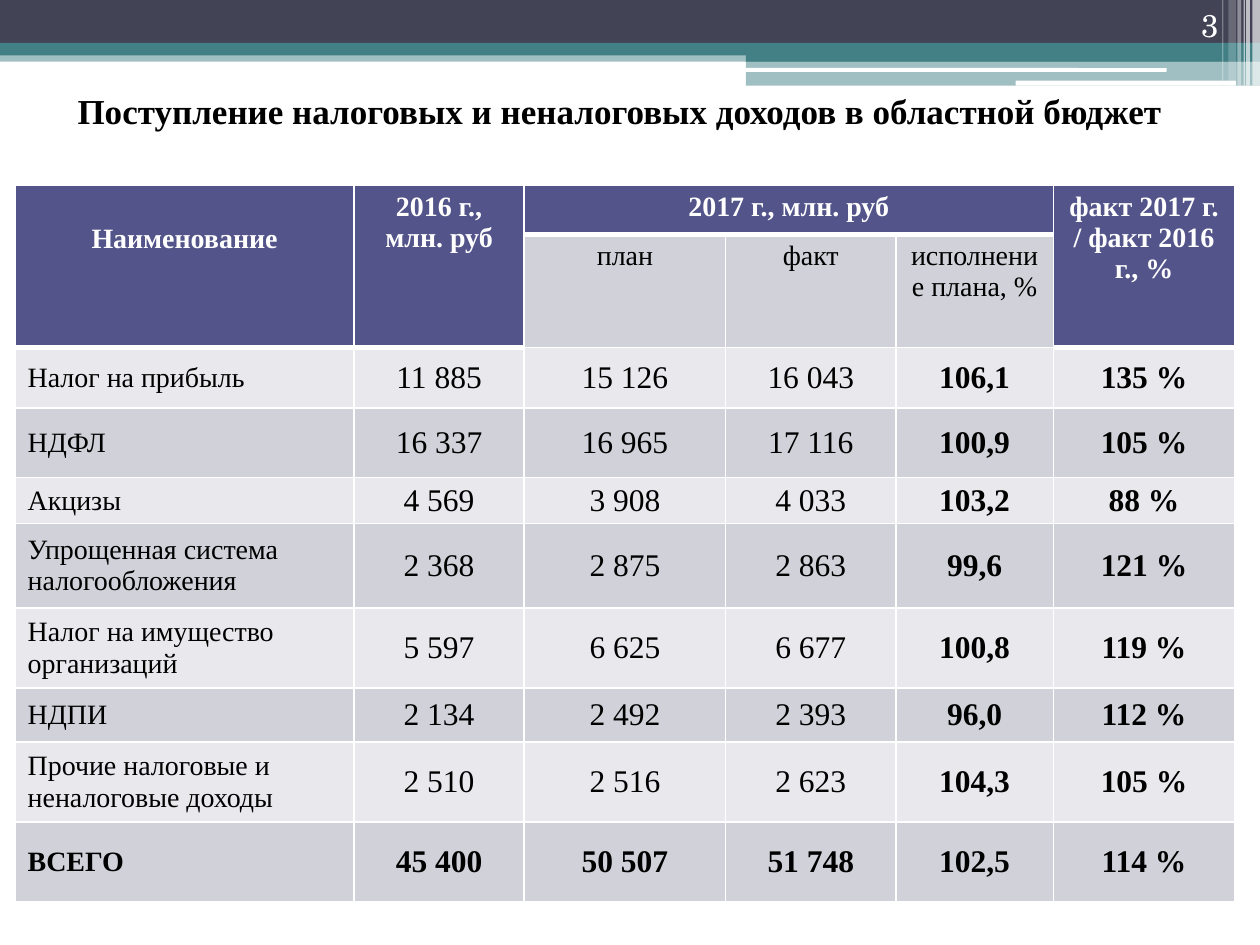
"""Build a slide on tax and non-tax revenues of the regional budget."""
from typing import NamedTuple

from lxml.etree import SubElement
from pptx import Presentation
from pptx.dml.color import RGBColor
from pptx.enum.shapes import MSO_SHAPE
from pptx.enum.text import MSO_ANCHOR, PP_ALIGN
from pptx.oxml.ns import qn
from pptx.util import Inches, Pt

COLORS = {
    "navy": "424456", "teal": "438086", "white": "FFFFFF", "black": "000000",
    "header": "53548A", "dark_band": "D1D1DA", "light_band": "E9E9ED",
}
BODY_FONT = "Times New Roman"
COLUMN_WIDTHS = [2.69, 1.35, 1.6, 1.35, 1.25, 1.44]
ROW_HEIGHTS = [0.39, 0.62, 0.48, 0.55, 0.36, 0.67, 0.63, 0.43, 0.63, 0.63]
MERGED_COLUMNS = (0, 1, 5)


class Bar(NamedTuple):
    left: float
    top: float
    width: float
    height: float
    color: str
    opacity: int = 100
    rounded: bool = False


class Heading(NamedTuple):
    row: int
    column: int
    text: str
    row_span: int = 1
    column_span: int = 1


class Revenue(NamedTuple):
    name: str
    fact_2016: str
    plan_2017: str
    fact_2017: str
    execution: str
    growth: str


BARS = [
    Bar(0, 0.4, 10, 0.09, "teal", 50),
    Bar(0, 0, 10, 0.34, "navy"),
    Bar(0, 0.34, 10, 0.1, "teal"),
    Bar(5.92, 0.39, 4.08, 0.1, "teal"),
    Bar(5.92, 0.48, 4.08, 0.2, "teal", 50),
    Bar(5.91, 0.54, 3.35, 0.03, "white", rounded=True),
    Bar(8.06, 0.64, 1.75, 0.04, "white", rounded=True),
    Bar(9.94, 0, 0.06, 0.68, "white", 65),
    Bar(9.89, 0, 0.03, 0.68, "white", 65),
    Bar(9.87, 0, 0.01, 0.68, "white", 60),
    Bar(9.82, 0, 0.03, 0.68, "white", 40),
    Bar(9.75, 0, 0.06, 0.64, "white", 20),
    Bar(9.7, 0, 0.01, 0.64, "white", 30),
]
HEADINGS = [
    Heading(0, 0, "Наименование", row_span=2),
    Heading(0, 1, "2016 г., млн. руб", row_span=2),
    Heading(0, 2, "2017 г., млн. руб", column_span=3),
    Heading(0, 5, "факт 2017 г. / факт 2016 г., %", row_span=2),
    Heading(1, 2, "план"),
    Heading(1, 3, "факт"),
    Heading(1, 4, "исполнение плана, %"),
]
REVENUES = [
    Revenue("Налог на прибыль", "11 885", "15 126", "16 043", "106,1", "135 %"),
    Revenue("НДФЛ", "16 337", "16 965", "17 116", "100,9", "105 %"),
    Revenue("Акцизы", "4 569", "3 908", "4 033", "103,2", "88 %"),
    Revenue("Упрощенная система налогообложения",
            "2 368", "2 875", "2 863", "99,6", "121 %"),
    Revenue("Налог на имущество организаций",
            "5 597", "6 625", "6 677", "100,8", "119 %"),
    Revenue("НДПИ", "2 134", "2 492", "2 393", "96,0", "112 %"),
    Revenue("Прочие налоговые и неналоговые доходы",
            "2 510", "2 516", "2 623", "104,3", "105 %"),
    Revenue("ВСЕГО", "45 400", "50 507", "51 748", "102,5", "114 %"),
]


def rgb(color: str) -> RGBColor:
    return RGBColor.from_string(COLORS[color])


def write(frame, text: str, size: int, color: str = "black", bold: bool = False,
          align=PP_ALIGN.CENTER, font: str = BODY_FONT) -> None:
    paragraph = frame.paragraphs[0]
    paragraph.text = text
    paragraph.alignment = align
    paragraph.font.name = font
    paragraph.font.size = Pt(size)
    paragraph.font.bold = bold
    paragraph.font.color.rgb = rgb(color)


def draw_bar(slide, bar: Bar) -> None:
    preset = MSO_SHAPE.ROUNDED_RECTANGLE if bar.rounded else MSO_SHAPE.RECTANGLE
    box = [Inches(length) for length in bar[:4]]
    shape = slide.shapes.add_shape(preset, *box)
    shape.shadow.inherit = False
    shape.line.fill.background()
    shape.fill.solid()
    shape.fill.fore_color.rgb = rgb(bar.color)
    if bar.opacity < 100:
        color = shape.fill._xPr.find(qn("a:solidFill"))[0]
        SubElement(color, qn("a:alpha"), val=str(bar.opacity * 1000))


def add_border(cell, side: str, points: int) -> None:
    properties = cell._tc.get_or_add_tcPr()
    line = SubElement(properties, qn(f"a:ln{side}"), w=str(Pt(points)))
    fill = SubElement(line, qn("a:solidFill"))
    SubElement(fill, qn("a:srgbClr"), val=COLORS["white"])


def style_cell(cell, row: int, column: int) -> None:
    is_header = row == 0 or (row == 1 and column in MERGED_COLUMNS)
    add_border(cell, "L", 1)
    add_border(cell, "R", 1)
    if row == 0:
        add_border(cell, "T", 1)
    add_border(cell, "B", 3 if is_header else 1)
    band = "dark_band" if row % 2 else "light_band"
    cell.fill.solid()
    cell.fill.fore_color.rgb = rgb("header" if is_header else band)


def fill_heading(table, heading: Heading) -> None:
    cell = table.cell(heading.row, heading.column)
    if heading.row_span * heading.column_span > 1:
        cell.merge(table.cell(heading.row + heading.row_span - 1,
                              heading.column + heading.column_span - 1))
    is_top = heading.row == 0
    write(cell.text_frame, heading.text, 16, "white" if is_top else "black", is_top)


def fill_revenue(table, row: int, revenue: Revenue) -> None:
    is_total = revenue is REVENUES[-1]
    for column, text in enumerate(revenue):
        cell = table.cell(row, column)
        cell.vertical_anchor = MSO_ANCHOR.MIDDLE
        if column == 0:
            write(cell.text_frame, text, 16, bold=is_total, align=PP_ALIGN.LEFT)
        else:
            cell.margin_left = cell.margin_right = 0
            cell.margin_top = cell.margin_bottom = 0
            write(cell.text_frame, text, 18, bold=is_total or column > 3)


def draw_revenue_table(slide) -> None:
    table = slide.shapes.add_table(
        len(ROW_HEIGHTS), len(COLUMN_WIDTHS),
        Inches(0.12), Inches(1.47), Inches(9.69), Inches(5.41)).table
    for column, width in zip(table.columns, COLUMN_WIDTHS):
        column.width = Inches(width)
    for row, height in zip(table.rows, ROW_HEIGHTS):
        row.height = Inches(height)
    for row in range(len(ROW_HEIGHTS)):
        for column in range(len(COLUMN_WIDTHS)):
            style_cell(table.cell(row, column), row, column)
    for heading in HEADINGS:
        fill_heading(table, heading)
    table.cell(0, 0).margin_top = Inches(0.3)
    for row, revenue in enumerate(REVENUES, start=2):
        fill_revenue(table, row, revenue)


def draw_title(slide) -> None:
    frame = slide.shapes.add_textbox(
        Inches(0), Inches(0.76), Inches(10), Inches(0.55)).text_frame
    frame.word_wrap = True
    frame.vertical_anchor = MSO_ANCHOR.MIDDLE
    frame.margin_top = 0
    frame.margin_bottom = Inches(0.31)
    frame.margin_right = Inches(0.26)
    write(frame, "Поступление налоговых и неналоговых доходов в областной бюджет",
          20, bold=True)


def draw_page_number(slide) -> None:
    frame = slide.shapes.add_textbox(
        Inches(8.94), Inches(0), Inches(0.83), Inches(0.4)).text_frame
    frame.word_wrap = True
    frame.vertical_anchor = MSO_ANCHOR.BOTTOM
    write(frame, "3", 18, "white", align=PP_ALIGN.RIGHT, font="TeX Gyre Schola")


def main() -> None:
    presentation = Presentation()
    presentation.slide_width, presentation.slide_height = Inches(10), Inches(7.5)
    slide = presentation.slides.add_slide(presentation.slide_layouts[6])
    for bar in BARS:
        draw_bar(slide, bar)
    draw_title(slide)
    draw_revenue_table(slide)
    draw_page_number(slide)
    presentation.save("out.pptx")


if __name__ == "__main__":
    main()
